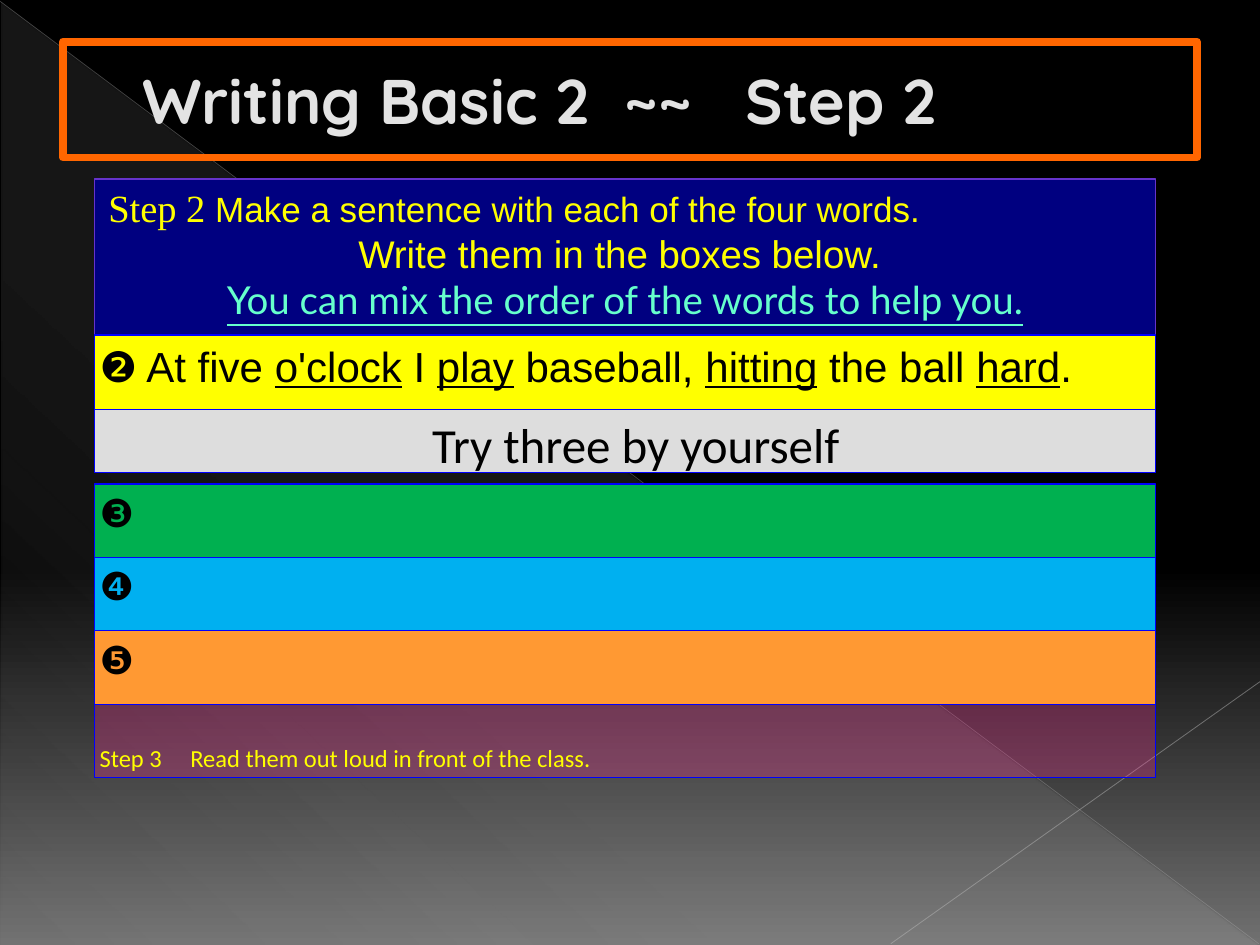
from dataclasses import dataclass

from lxml import etree
from pptx import Presentation
from pptx import util as u
from pptx.dml.color import RGBColor
from pptx.enum import dml, shapes, text
from pptx.oxml.ns import qn

COLUMNS, ROWS = 100, 75
WIDTH, HEIGHT = u.Inches(10), u.Inches(7.5)
PANEL_LEFT, PANEL_COLUMNS = 7.5, 84.2
ANSWER_TOP, ANSWER_ROWS = 38.4, 5.83
BLUE = "0000FF"


@dataclass
class Piece:
    words: str
    size: float
    font: str = "Arial"
    color: str = "000000"
    underline: bool = False


@dataclass
class Line:
    pieces: list[Piece]
    centered: bool = False
    indent: float = 0
    tabs: tuple[float, ...] = ()


@dataclass
class Panel:
    top: float
    rows: float
    fill: str
    lines: list[Line]
    border: str = BLUE
    opacity: int = 100
    anchor: text.MSO_ANCHOR = text.MSO_ANCHOR.TOP


def col(count: float) -> int:
    return round(WIDTH * count / COLUMNS)


def row(count: float) -> int:
    return round(HEIGHT * count / ROWS)


def rgb(color: str) -> RGBColor:
    return RGBColor.from_string(color)


def set_opacity(element, percent: int) -> None:
    for color in element.iter(qn("a:srgbClr")):
        etree.SubElement(color, qn("a:alpha"), val=str(percent * 1000))


def paint_gradient(fill, owner, stops: list[tuple[int, str, int]], angle: float) -> None:
    fill.gradient()
    fill.gradient_angle = 360 - angle
    stop_list = next(owner.iter(qn("a:gsLst")))
    for old_stop in list(stop_list):
        stop_list.remove(old_stop)
    for position, color, opacity in stops:
        stop = etree.SubElement(stop_list, qn("a:gs"), pos=str(position * 1000))
        etree.SubElement(stop, qn("a:srgbClr"), val=color)
        set_opacity(stop, opacity)


def draw_ray(slide, start: tuple[float, float], end: tuple[float, float],
             color: str, weight: float, opacity: int) -> None:
    ray = slide.shapes.add_connector(
        shapes.MSO_CONNECTOR.STRAIGHT, col(start[0]), row(start[1]), col(end[0]), row(end[1]))
    ray.line.color.rgb = rgb(color)
    ray.line.width = u.Pt(weight)
    properties = ray.element.spPr
    set_opacity(properties, opacity)
    etree.SubElement(properties, qn("a:effectLst"))


def draw_backdrop(slide) -> None:
    paint_gradient(slide.background.fill, slide.element,
                   [(0, "000000", 100), (60, "000000", 100), (100, "707070", 100)], 90)
    wedge = slide.shapes.add_shape(
        shapes.MSO_SHAPE.RIGHT_TRIANGLE, col(0.1), row(0.2), col(99.8), row(74.8))
    wedge.shadow.inherit = False
    wedge.line.fill.background()
    paint_gradient(wedge.fill, wedge.element,
                   [(0, "F8F8F8", 10), (70, "F8F8F8", 8), (100, "F8F8F8", 1)], 133)
    draw_ray(slide, (0, 0.1), (99.9, 74.9), "B4B4B4", 0.39, 35)
    draw_ray(slide, (100, 54.1), (70.7, 74.9), "BDBDBD", 0.47, 45)


def set_tabs(paragraph, stops: tuple[float, ...]) -> None:
    if stops:
        properties = paragraph._p.get_or_add_pPr()
        tab_list = etree.SubElement(properties, qn("a:tabLst"))
        for stop in stops:
            etree.SubElement(tab_list, qn("a:tab"), pos=str(col(stop)), algn="l")


def write_line(paragraph, line: Line) -> None:
    paragraph.alignment = text.PP_ALIGN.CENTER if line.centered else text.PP_ALIGN.LEFT
    if line.indent:
        paragraph._p.get_or_add_pPr().set("marL", str(col(line.indent)))
    set_tabs(paragraph, line.tabs)
    for piece in line.pieces:
        run = paragraph.add_run()
        run.text = piece.words
        run.font.size = u.Pt(piece.size)
        run.font.name = piece.font
        run.font.color.rgb = rgb(piece.color)
        run.font.underline = piece.underline


def draw_panel(slide, panel: Panel) -> None:
    box = slide.shapes.add_shape(
        shapes.MSO_SHAPE.RECTANGLE,
        col(PANEL_LEFT), row(panel.top), col(PANEL_COLUMNS), row(panel.rows))
    box.shadow.inherit = False
    box.fill.solid()
    box.fill.fore_color.rgb = rgb(panel.fill)
    if panel.opacity < 100:
        set_opacity(box.element.spPr, panel.opacity)
    box.line.color.rgb = rgb(panel.border)
    box.line.width = u.Pt(0.75)
    frame = box.text_frame
    frame.word_wrap = True
    frame.vertical_anchor = panel.anchor
    frame.margin_left = frame.margin_right = col(0.4)
    frame.margin_top = frame.margin_bottom = row(0.4)
    for index, line in enumerate(panel.lines):
        write_line(frame.add_paragraph() if index else frame.paragraphs[0], line)


def format_title(title) -> None:
    title.left, title.top, title.width, title.height = col(5), row(3.3), col(90), row(9.2)
    title.line.color.rgb = rgb("FF6600")
    title.line.width = u.Pt(4.5)
    frame = title.text_frame
    frame.text = "Writing Basic 2\t~~\tStep 2"
    frame.word_wrap = True
    frame.auto_size = text.MSO_AUTO_SIZE.NONE
    frame.vertical_anchor = text.MSO_ANCHOR.MIDDLE
    frame.margin_left = col(6.3)
    heading = frame.paragraphs[0]
    heading.alignment = text.PP_ALIGN.LEFT
    set_tabs(heading, (38.3, 47.9))
    font = heading.runs[0].font
    font.name, font.size, font.bold = "Quicksand", u.Pt(36), True
    font.color.rgb = rgb("E3E3E3")
    title.element.getparent().append(title.element)


def build_panels() -> list[Panel]:
    yellow = "FFFF00"
    instructions = [
        Line([Piece("Step 2 ", 22, "Times New Roman", yellow),
              Piece("Make a sentence with each of the four words.", 20, color=yellow)],
             indent=0.7),
        Line([Piece("Write them in the boxes below. ", 22, color=yellow)], centered=True),
        Line([Piece("You can mix the order of the words to help you.", 22, "Lato",
                    "66FFCC", True)], centered=True),
    ]
    example = ["❷ At five ", "o'clock", " I ", "play", " baseball, ", "hitting",
               " the ball ", "hard", "."]
    sentence = Line([Piece(words, 24, underline=index % 2 == 1)
                     for index, words in enumerate(example)])
    invitation = Line([Piece("Try three by yourself", 28, "Calibri")],
                      centered=True, indent=1.7)
    reading = Line([Piece("Step 3\tRead them out loud in front of the class.", 14,
                          "Calibri", yellow)], tabs=(7.2,))
    answers = [("❸", "00B050"), ("❹", "00B0F0"), ("❺", "FF9933")]
    return [
        Panel(14.2, 12.5, "000080", instructions, border="6633CC"),
        Panel(26.6, 5.9, yellow, [sentence]),
        *(Panel(ANSWER_TOP + index * ANSWER_ROWS, ANSWER_ROWS, fill,
                [Line([Piece(number, 22)])])
          for index, (number, fill) in enumerate(answers)),
        Panel(ANSWER_TOP + len(answers) * ANSWER_ROWS, ANSWER_ROWS, "FF3399", [reading],
              opacity=28, anchor=text.MSO_ANCHOR.BOTTOM),
        Panel(32.5, 5, "DDDDDD", [invitation]),
    ]


def main() -> None:
    deck = Presentation()
    deck.slide_width, deck.slide_height = WIDTH, HEIGHT
    slide = deck.slides.add_slide(deck.slide_layouts[5])
    draw_backdrop(slide)
    format_title(slide.shapes.title)
    for panel in build_panels():
        draw_panel(slide, panel)
    deck.save("out.pptx")


if __name__ == "__main__":
    main()
